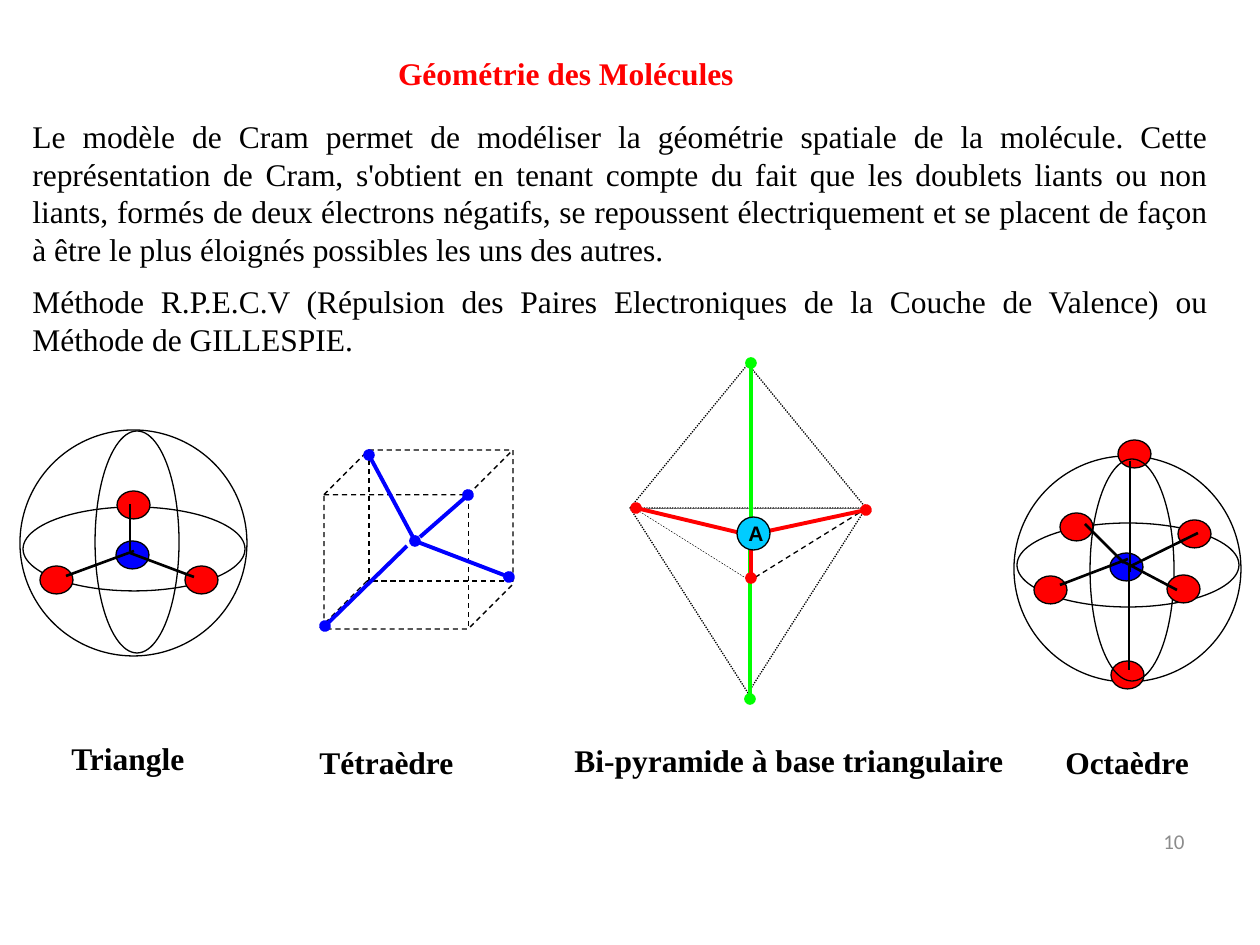
"""Build a slide on the geometry of molecules."""
import lxml.etree
import pptx
import pptx.dml.color
import pptx.enum.dml
import pptx.enum.shapes
import pptx.enum.text
import pptx.oxml.ns
import pptx.util

PIXEL = 914400 // 126
COLORS = {
    "black": "000000", "white": "FFFFFF", "red": "FF0000", "blue": "0000FF",
    "green": "00FF00", "cyan": "00CCFF", "gray": "8C8C8C",
}
SHAPE = pptx.enum.shapes.MSO_SHAPE
DASH = pptx.enum.dml.MSO_LINE.DASH
DOT = pptx.enum.dml.MSO_LINE.ROUND_DOT
ALIGN = pptx.enum.text.PP_ALIGN
ANCHOR = pptx.enum.text.MSO_ANCHOR


def px(*lengths):
    """Turn pixel lengths into EMU."""
    return [pptx.util.Emu(length * PIXEL) for length in lengths]


def color(name):
    """Look up a named colour."""
    return pptx.dml.color.RGBColor.from_string(COLORS[name])


def set_line(line, name, width, dash):
    """Format an outline or a connector line."""
    line.color.rgb = color(name)
    line.width = pptx.util.Pt(width)
    if dash is not None:
        line.dash_style = dash


def add_text(page, text, box, size=18, font="Times New Roman", ink="black", bold=False,
             align=ALIGN.LEFT, anchor=ANCHOR.TOP, wrap=True, grow=True, before=0, after=0):
    """Add a text box holding one formatted paragraph."""
    frame = page.shapes.add_textbox(*px(*box)).text_frame
    frame.word_wrap = wrap
    frame.vertical_anchor = anchor
    if grow:
        frame.auto_size = pptx.enum.text.MSO_AUTO_SIZE.SHAPE_TO_FIT_TEXT
    para = frame.paragraphs[0]
    para.alignment = align
    para.space_before = pptx.util.Pt(before)
    para.space_after = pptx.util.Pt(after)
    span = para.add_run()
    span.text = text
    span.font.name = font
    span.font.size = pptx.util.Pt(size)
    span.font.bold = bold
    span.font.color.rgb = color(ink)


def add_figure(page, kind, box, fill=None, dash=None, rotation=0):
    """Add an outlined preset shape."""
    figure = page.shapes.add_shape(kind, *px(*box))
    figure.shadow.inherit = False
    figure.rotation = rotation
    if fill:
        figure.fill.solid()
        figure.fill.fore_color.rgb = color(fill)
    else:
        figure.fill.background()
    set_line(figure.line, "black", 0.75, dash)


def add_bond(page, origin, ends, ink="black", width=1.5, dash=None, ovals=()):
    """Add a straight line between two points measured from the origin."""
    left, top = origin
    points = [(left + x, top + y) for x, y in ends]
    bond = page.shapes.add_connector(
        pptx.enum.shapes.MSO_CONNECTOR.STRAIGHT, *px(*points[0], *points[1]))
    set_line(bond.line, ink, width, dash)
    properties = bond.element.spPr
    outline = properties.find(pptx.oxml.ns.qn("a:ln"))
    for end in ovals:
        lxml.etree.SubElement(outline, pptx.oxml.ns.qn(f"a:{end}"), type="oval")
    lxml.etree.SubElement(properties, pptx.oxml.ns.qn("a:effectLst"))


def add_sphere(page, box, rings, atoms_behind, atoms_front, bonds):
    """Draw a molecule inscribed in a sphere with two great circles."""
    left, top, width, height = box

    def add_atoms(atoms):
        """Draw the coloured atoms."""
        for x, y, fill in atoms:
            add_figure(page, SHAPE.OVAL, (left + x, top + y, 33, 28), fill)

    add_figure(page, SHAPE.OVAL, box)
    for (x, y), rotation in zip(rings, (0, 90)):
        add_figure(page, SHAPE.OVAL, (left + x, top + y, width - 5, 84), rotation=rotation)
        if rotation == 0:
            add_atoms(atoms_behind)
    add_atoms(atoms_front)
    for ends in bonds:
        add_bond(page, (left, top), ends)


def add_tetrahedron(page, box):
    """Draw a tetrahedral molecule in a dashed cube."""
    left, top, width, height = box
    origin = left, top
    add_figure(page, SHAPE.CUBE, box, dash=DASH)
    for ends in [((45, 1), (45, 135)), ((width, 131), (43, 131)), ((43, 131), (-4, height - 1))]:
        add_bond(page, origin, ends, width=0.75, dash=DASH)
    bonds = [((91, 91), (45, 5)), ((83, 96), (1, 176)),
             ((91, 91), (185, 127)), ((96, 87), (144, 45))]
    for index, ends in enumerate(bonds):
        ovals = ("tailEnd",) if index else ("headEnd", "tailEnd")
        add_bond(page, origin, ends, "blue", 2.25, ovals=ovals)


def add_bipyramid(page, box):
    """Draw a trigonal bipyramid around the central atom A."""
    left, top, width, height = box
    origin = left, top
    base = 144
    tail = ("tailEnd",)
    add_figure(page, SHAPE.ISOSCELES_TRIANGLE, (left, top + base, width, height - base),
               "white", DOT, 180)
    add_bond(page, origin, ((122, 218), (4, base)), width=0.25, dash=DASH)
    add_bond(page, origin, ((237, base), (121, 216)), width=0.75, dash=DASH)
    add_bond(page, origin, ((120, 179), (120, 335)), "green", 2.25, ovals=tail)
    add_figure(page, SHAPE.ISOSCELES_TRIANGLE, (left, top, width, base), "white", DOT)
    add_bond(page, origin, ((120, 0), (120, 219)), width=0.75, dash=DASH)
    for ends, ink, ovals in [
        (((6, base), (123, 172)), "red", ("headEnd", "tailEnd")),
        (((129, 169), (236, 146)), "red", tail),
        (((121, 179), (121, 214)), "red", tail),
        (((121, 165), (121, -1)), "green", tail),
    ]:
        add_bond(page, origin, ends, ink, 2.25, ovals=ovals)
    add_figure(page, SHAPE.OVAL, (left + 107, top + 153, 33, 33), "cyan")
    add_text(page, "A", (left + 106, top + 150, 42, 32), size=12, font="Arial",
             bold=True, grow=False)


def add_explanation(page, box):
    """Write the title and the two justified paragraphs."""
    left, top, width, height = box
    add_text(page, "Géométrie des Molécules", (left + 364, top, 364, 50), ink="red",
             bold=True, align=ALIGN.CENTER, wrap=False)
    add_text(page, "Le modèle de Cram permet de modéliser la géométrie spatiale de la molécule. "
             "Cette représentation de Cram, s'obtient en tenant compte du fait que les doublets "
             "liants ou non liants, formés de deux électrons négatifs, se repoussent "
             "électriquement et se placent de façon à être le plus éloignés possibles les uns "
             "des autres.", (left, top + 62, width, 165), align=ALIGN.JUSTIFY,
             anchor=ANCHOR.MIDDLE, before=6, after=6)
    add_text(page, "Méthode R.P.E.C.V (Répulsion des Paires Electroniques de la Couche de "
             "Valence) ou Méthode de GILLESPIE.", (left, top + height - 89, width, 89),
             align=ALIGN.JUSTIFY, before=6, after=6)


def add_captions(page, box):
    """Write the names of the four geometries and the page number."""
    left, top, width, height = box
    for text, x, y, extent, align, wrap, before in [
        ("Triangle", 0, 0, 140, ALIGN.LEFT, False, 0),
        ("Tétraèdre", 248, 4, 451, ALIGN.LEFT, True, 9),
        ("Bi-pyramide à base triangulaire", 503, 2, 630, ALIGN.JUSTIFY, True, 0),
        ("Octaèdre", 994, 4, 150, ALIGN.JUSTIFY, False, 0),
    ]:
        add_text(page, text, (left + x, top + y, extent, 50), bold=True, align=align,
                 wrap=wrap, before=before)
    add_text(page, "10", (left + width - 294, top + height - 50, 294, 50), size=12,
             font="Calibri", ink="gray", align=ALIGN.RIGHT, anchor=ANCHOR.MIDDLE, grow=False)


def main():
    """Assemble and save the deck."""
    deck = pptx.Presentation()
    deck.slide_width, deck.slide_height = px(1260, 945)
    page = deck.slides.add_slide(deck.slide_layouts[6])
    add_sphere(
        page, (1014, 456, 227, 226), [(3, 67), (7, 72)],
        [(97, 205, "red"), (104, -16, "red"), (164, 64, "red")],
        [(46, 57, "red"), (96, 97, "blue"), (153, 119, "red"), (20, 120, "red")],
        [((46, 129), (114, 103)), ((110, 106), (163, 134)), ((110, 107), (71, 68)),
         ((115, 111), (184, 77)), ((116, 5), (116, 116)), ((115, 110), (115, 214))])
    add_tetrahedron(page, (324, 450, 189, 179))
    add_sphere(
        page, (20, 430, 227, 226), [(3, 77), (6, 70)], [],
        [(97, 61, "red"), (96, 111, "blue"), (165, 136, "red"), (20, 136, "red")],
        [((46, 146), (114, 121)), ((110, 123), (174, 147)), ((110, 121), (110, 74))])
    add_explanation(page, (20, 48, 1201, 317))
    add_bipyramid(page, (630, 364, 236, 329))
    add_captions(page, (59, 733, 1138, 133))
    deck.save("out.pptx")


if __name__ == "__main__":
    main()
